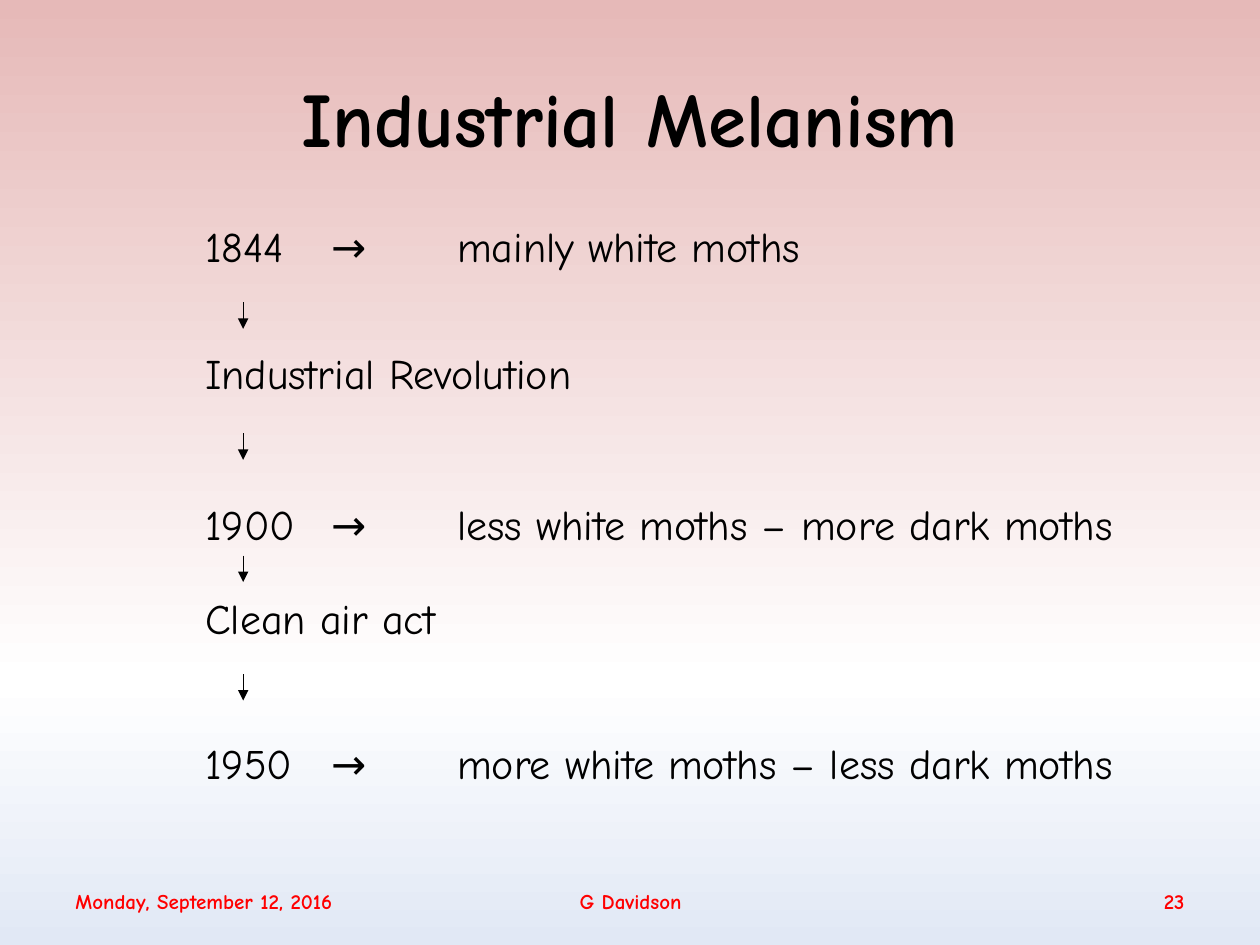
from copy import deepcopy

from lxml.etree import SubElement
from pptx import Presentation
from pptx.dml.color import RGBColor
from pptx.enum.shapes import MSO_CONNECTOR
from pptx.enum.text import MSO_ANCHOR, PP_ALIGN
from pptx.oxml.ns import qn
from pptx.util import Inches, Pt


def color(value):
    return RGBColor.from_string(value)


class SlideBuilder:
    font_name = "Comic Neue"
    ink = "000000"
    accent = "FF0000"

    def __init__(self, page):
        self.page = page

    def background(self, stops):
        fill = self.page.background.fill
        fill.gradient()
        fill.gradient_angle = 270
        stop_list = next(self.page.element.iter(qn("a:gsLst")))
        while len(stop_list) < len(stops):
            stop_list.append(deepcopy(stop_list[0]))
        for stop, (position, value) in zip(fill.gradient_stops, stops):
            stop.position = position
            stop.color.rgb = color(value)

    def text(self, words, left, top, width, height, ink=None,
             align=PP_ALIGN.LEFT, tabs=(), **font_format):
        box = self.page.shapes.add_textbox(
            Inches(left), Inches(top), Inches(width), Inches(height))
        frame = box.text_frame
        frame.word_wrap = True
        frame.vertical_anchor = MSO_ANCHOR.MIDDLE
        para = frame.paragraphs[0]
        para.alignment = align
        if tabs:
            tab_list = SubElement(para._p.get_or_add_pPr(), qn("a:tabLst"))
            for position in tabs:
                SubElement(tab_list, qn("a:tab"),
                           pos=str(Inches(position)), algn="l")
        span = para.add_run()
        span.text = words
        for name, value in {"name": self.font_name, **font_format}.items():
            setattr(span.font, name, value)
        span.font.color.rgb = color(ink or self.ink)

    def down_arrow(self, x, top, length):
        arrow = self.page.shapes.add_connector(
            MSO_CONNECTOR.STRAIGHT,
            Inches(x), Inches(top), Inches(x), Inches(top + length))
        arrow.line.color.rgb = color(self.ink)
        arrow.line.width = Pt(0.75)
        properties = arrow.element.spPr
        SubElement(properties.find(qn("a:ln")), qn("a:tailEnd"), type="triangle")
        SubElement(properties, qn("a:effectLst"))


def main():
    deck = Presentation()
    deck.slide_width, deck.slide_height = Inches(10), Inches(7.5)
    builder = SlideBuilder(deck.slides.add_slide(deck.slide_layouts[6]))
    builder.background([(0, "E6B9B8"), (0.72, "FFFFFF"), (1, "E1E8F5")])

    # Footer
    footers = [
        ("Monday, September 12, 2016", 0.5, 3.32, PP_ALIGN.LEFT),
        ("G Davidson", 3.42, 3.17, PP_ALIGN.CENTER),
        ("23", 7.17, 2.33, PP_ALIGN.RIGHT),
    ]
    for words, left, width, align in footers:
        builder.text(words, left, 6.95, width, 0.4, ink=builder.accent,
                     align=align, size=Pt(12), bold=True)

    # Title
    builder.text("Industrial Melanism", 0.5, 0.3, 9, 1.25,
                 align=PP_ALIGN.CENTER, size=Pt(44), bold=True)

    # Timeline, with tabs between year, arrow and outcome
    events = [
        ("1844\t→\tmainly white moths", 1.7),
        ("Industrial Revolution", 2.71),
        ("1900\t→\tless white moths – more dark moths", 3.91),
        ("Clean air act", 4.65),
        ("1950\t→\tmore white moths – less dark moths", 5.8),
    ]
    for words, top in events:
        builder.text(words, 1.53, top, 7.76, 0.5, tabs=(1, 2), size=Pt(24))

    # Arrows between the events
    for top in (2.4, 3.44, 4.41, 5.35):
        builder.down_arrow(1.93, top, 0.21)

    deck.save("out.pptx")


if __name__ == "__main__":
    main()
